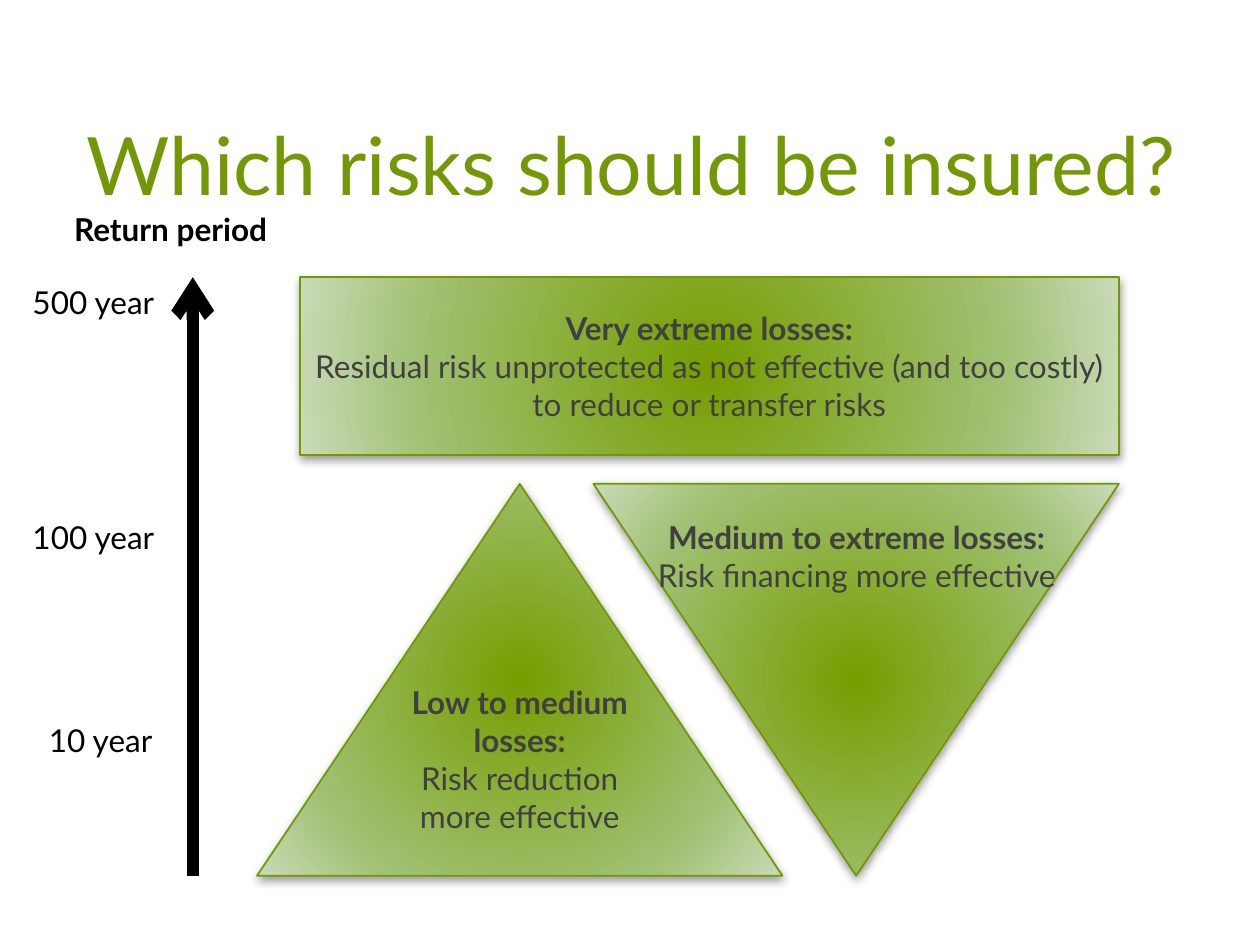
from lxml import etree
from pptx import Presentation
from pptx.dml.color import RGBColor
from pptx.enum.shapes import MSO_CONNECTOR, MSO_SHAPE
from pptx.enum.text import MSO_ANCHOR, PP_ALIGN
from pptx.oxml import parse_xml
from pptx.oxml.ns import qn
from pptx.util import Inches, Pt

LEFT, CENTER = PP_ALIGN.LEFT, PP_ALIGN.CENTER
TOP, MIDDLE, BOTTOM = MSO_ANCHOR.TOP, MSO_ANCHOR.MIDDLE, MSO_ANCHOR.BOTTOM
RECTANGLE, TRIANGLE = MSO_SHAPE.RECTANGLE, MSO_SHAPE.ISOSCELES_TRIANGLE
COLORS = {
    "title": "749805", "label": "000000", "body": "404040", "outline": "739801",
    "core": "779D00", "middle": "A0C072", "rim": "CADAB7",
}
STOPS = {0: "core", 69: "middle", 100: "rim"}
DRAWING_NS = 'xmlns:a="http://schemas.openxmlformats.org/drawingml/2006/main"'

# The grid has 100 columns and 75 rows
COLUMN = Inches(10) // 100
ROW = Inches(7.5) // 75
AXIS_COLUMN = 15.3
CHART_TOP, TRIANGLE_TOP, CHART_BOTTOM = 22, 38.4, 69.5
CHART_RIGHT = 88.8
TRIANGLE_WIDTH = 41.7
TRIANGLE_HEIGHT = CHART_BOTTOM - TRIANGLE_TOP


def place(column, row, columns, rows):
    """Turn a grid cell range into left, top, width and height."""
    return [int(column * COLUMN), int(row * ROW), int(columns * COLUMN), int(rows * ROW)]


def write(shape, lines, color, size=18, align=LEFT, anchor=TOP):
    """Write (text, bold) lines, one paragraph each."""
    frame = shape.text_frame
    frame.word_wrap = True
    frame.vertical_anchor = anchor
    for index, (text, bold) in enumerate(lines):
        para = frame.paragraphs[0] if index == 0 else frame.add_paragraph()
        para.alignment = align
        span = para.add_run()
        span.text = text
        span.font.color.rgb = RGBColor.from_string(COLORS[color])
        for name, value in {"name": "Lato", "size": Pt(size), "bold": bold}.items():
            setattr(span.font, name, value)


deck = Presentation()
deck.slide_width, deck.slide_height = 100 * COLUMN, 75 * ROW
page = deck.slides.add_slide(deck.slide_layouts[6])

# Title
title = page.shapes.add_textbox(*place(2.9, 2.3, 94.3, 15))
write(title, [("Which risks should be insured?", False)], "title", 46, CENTER, BOTTOM)

# Return period axis
x, top, _, height = place(AXIS_COLUMN, CHART_TOP, 0, CHART_BOTTOM - CHART_TOP)
axis = page.shapes.add_connector(MSO_CONNECTOR.STRAIGHT, x, top + height, x, top)
axis.line.color.rgb = RGBColor.from_string(COLORS["label"])
axis.line.width = Pt(7)
etree.SubElement(axis.line._get_or_add_ln(), qn("a:tailEnd"), type="arrow")
etree.SubElement(axis._element.spPr, qn("a:effectLst"))

for text, column, row, columns, bold in [
    ("Return period", 4.9, 16.2, 18.9, True),
    ("500 year", 1.6, CHART_TOP, 12.7, False),
    ("100 year", 1.6, 40.6, 12.7, False),
    ("10 year", 2.9, 56.7, 12.7, False),
]:
    label = page.shapes.add_textbox(*place(column, row, columns, 4))
    write(label, [(text, bold)], "label")

# Risk layers
stops = "".join(
    f'<a:gs pos="{share * 1000}"><a:srgbClr val="{COLORS[name]}"/></a:gs>'
    for share, name in STOPS.items()
)
gradient = (
    f'<a:gradFill {DRAWING_NS} rotWithShape="1"><a:gsLst>{stops}</a:gsLst>'
    '<a:path path="circle"><a:fillToRect l="50000" t="50000" r="50000" b="50000"/>'
    "</a:path></a:gradFill>"
)
shadow = (
    f'<a:effectLst {DRAWING_NS}><a:outerShdw blurRad="{Pt(5)}" dist="{Pt(2)}" '
    'dir="5400000" rotWithShape="0"><a:srgbClr val="000000">'
    '<a:alpha val="40000"/></a:srgbClr></a:outerShdw></a:effectLst>'
)
layers = []
for preset, column, row, columns, rows, rotation in [
    (RECTANGLE, 23.8, CHART_TOP, 65, 14.1, 0),
    (TRIANGLE, 20.4, TRIANGLE_TOP, TRIANGLE_WIDTH, TRIANGLE_HEIGHT, 0),
    (TRIANGLE, CHART_RIGHT - TRIANGLE_WIDTH, TRIANGLE_TOP,
     TRIANGLE_WIDTH, TRIANGLE_HEIGHT, 180),
]:
    layer = page.shapes.add_shape(preset, *place(column, row, columns, rows))
    layer.rotation = rotation
    layer.line.color.rgb = RGBColor.from_string(COLORS["outline"])
    layer.line.width = Pt(1)
    properties = layer._element.spPr
    properties.find(qn("a:prstGeom")).addnext(parse_xml(gradient))
    properties.append(parse_xml(shadow))
    layers.append(layer)

extreme, low, _ = layers
write(extreme, [
    ("Very extreme losses:", True),
    ("Residual risk unprotected as not effective (and too costly) "
     "to reduce or transfer risks", False),
], "body", align=CENTER, anchor=MIDDLE)
write(low, [
    ("Low to medium losses:", True),
    ("Risk reduction more effective", False),
], "body", align=CENTER, anchor=MIDDLE)
low.text_frame.margin_top, low.text_frame.margin_bottom = 0, 3 * ROW

medium = page.shapes.add_textbox(*place(51.1, 40.6, 33.8, 13.1))
write(medium, [
    ("Medium to extreme losses:", True),
    ("Risk financing more effective", False),
], "body", align=CENTER)

deck.save("out.pptx")
